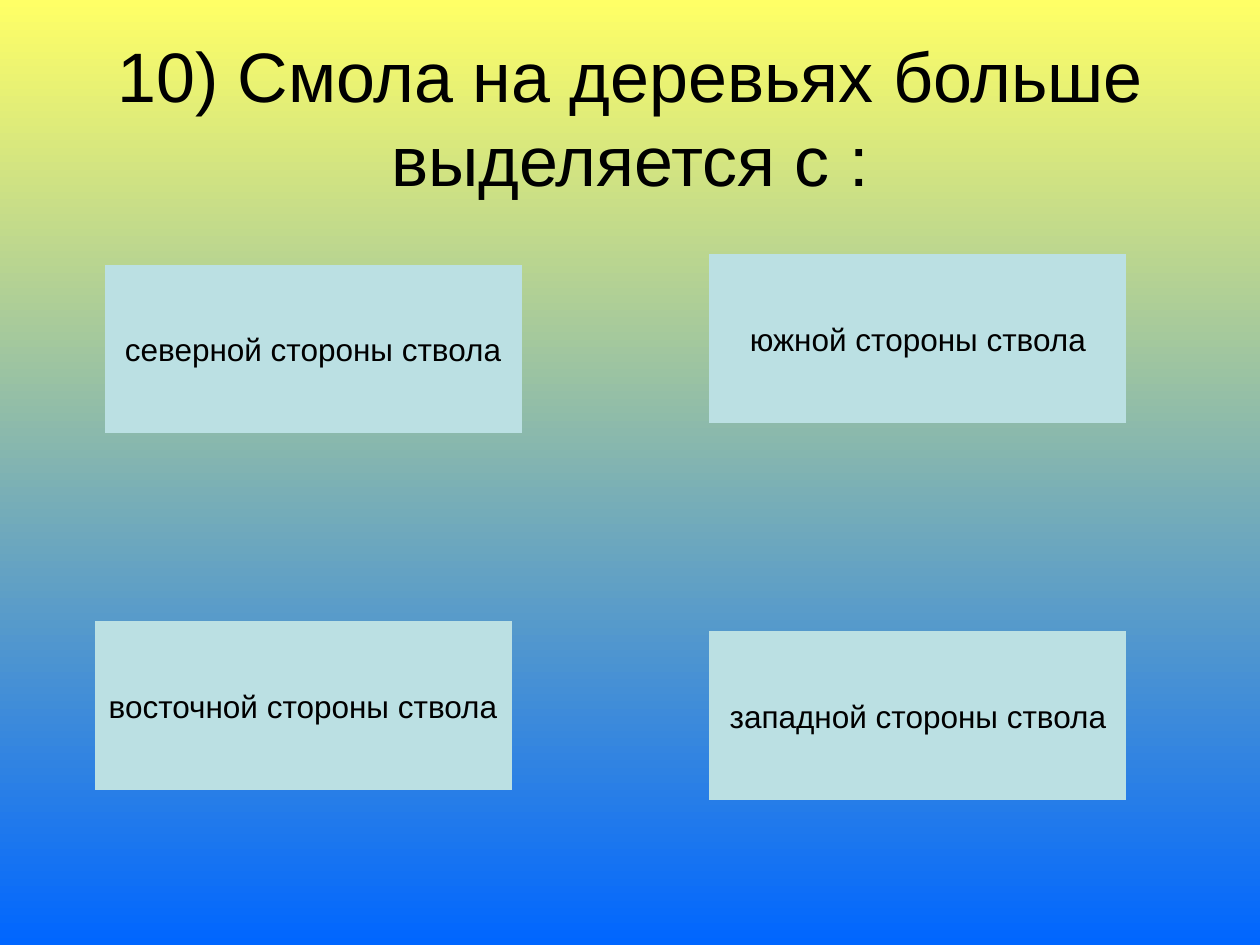
from dataclasses import dataclass

from pptx import Presentation
from pptx.dml.color import RGBColor
from pptx.enum.shapes import MSO_SHAPE as Shape
from pptx.enum.text import MSO_ANCHOR as Anchor, MSO_AUTO_SIZE as AutoSize, PP_ALIGN as Align
from pptx.slide import Slide
from pptx.text.text import TextFrame
from pptx.util import Inches, Pt


@dataclass(frozen=True)
class Theme:
    font: str = "Arial"
    text: str = "000000"
    button: str = "BBE0E3"
    sky: tuple[str, str] = ("FFFF66", "0066FF")
    title_size: int = 40
    button_size: int = 18


@dataclass(frozen=True)
class Answer:
    text: str
    left: float
    top: float


THEME = Theme()
WIDTH, HEIGHT = 10, 7.5
BUTTON_WIDTH, BUTTON_HEIGHT = 3.31, 1.34
TITLE = "10) Смола на деревьях больше выделяется с :"
ANSWERS = (
    Answer("северной стороны ствола", 0.83, 2.1),
    Answer("восточной стороны ствола", 0.75, 4.93),
    Answer("западной стороны ствола", 5.63, 5.01),
    Answer("южной стороны ствола", 5.63, 2.02),
)


def set_values(target: object, values: dict[str, object]) -> None:
    for name, value in values.items():
        setattr(target, name, value)


def write_text(frame: TextFrame, text: str, size: int, wrap: bool) -> None:
    frame.text = text
    set_values(frame, {"auto_size": AutoSize.NONE, "word_wrap": wrap,
                       "vertical_anchor": Anchor.MIDDLE})
    paragraph = frame.paragraphs[0]
    paragraph.alignment = Align.CENTER
    font = paragraph.runs[0].font
    set_values(font, {"name": THEME.font, "size": Pt(size)})
    font.color.rgb = RGBColor.from_string(THEME.text)


def paint_background(slide: Slide) -> None:
    fill = slide.background.fill
    fill.gradient()
    fill.gradient_angle = 270
    for stop, color in zip(fill.gradient_stops, THEME.sky):
        stop.color.rgb = RGBColor.from_string(color)


def add_title(slide: Slide) -> None:
    title = slide.shapes.title
    set_values(title, {"left": Inches(0.05 * WIDTH), "top": Inches(0.04 * HEIGHT),
                       "width": Inches(0.9 * WIDTH), "height": Inches(HEIGHT / 6)})
    write_text(title.text_frame, TITLE, THEME.title_size, True)


def add_answer(slide: Slide, answer: Answer) -> None:
    button = slide.shapes.add_shape(
        Shape.ACTION_BUTTON_CUSTOM, Inches(answer.left), Inches(answer.top),
        Inches(BUTTON_WIDTH), Inches(BUTTON_HEIGHT))
    button.shadow.inherit = False
    button.fill.solid()
    button.fill.fore_color.rgb = RGBColor.from_string(THEME.button)
    button.line.fill.background()
    write_text(button.text_frame, answer.text, THEME.button_size, False)


def main() -> None:
    """Build the quiz slide with its question and four answer buttons."""
    presentation = Presentation()
    set_values(presentation, {"slide_width": Inches(WIDTH), "slide_height": Inches(HEIGHT)})
    slide = presentation.slides.add_slide(presentation.slide_layouts.get_by_name("Title Only"))
    paint_background(slide)
    add_title(slide)
    for answer in ANSWERS:
        add_answer(slide, answer)
    presentation.save("out.pptx")


if __name__ == "__main__":
    main()
